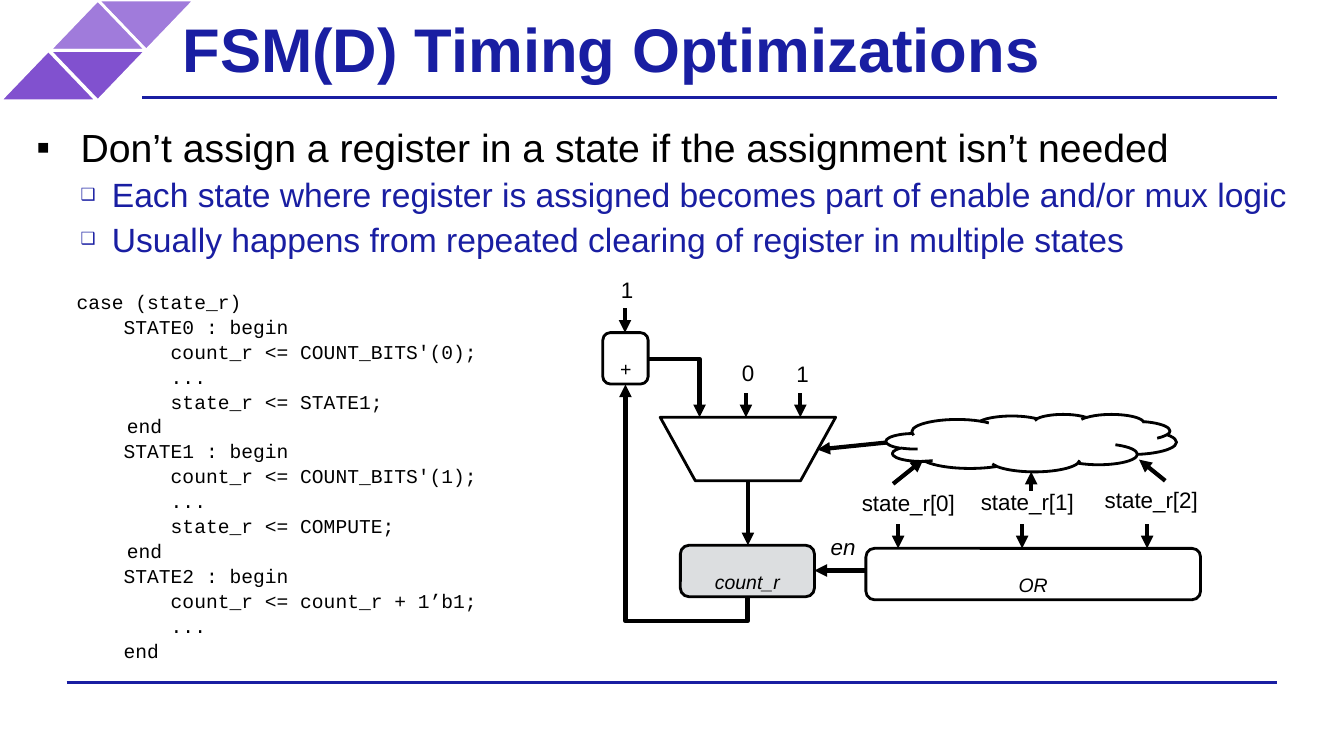
from pptx import Presentation
from pptx.dml.color import RGBColor
from pptx.enum.shapes import MSO_CONNECTOR, MSO_SHAPE
from pptx.enum.text import MSO_ANCHOR, PP_ALIGN
from pptx.oxml.ns import qn
from pptx.util import Inches, Pt
from lxml import etree

STRAIGHT, ELBOW = MSO_CONNECTOR.STRAIGHT, MSO_CONNECTOR.ELBOW
TRIANGLE, CLOUD = MSO_SHAPE.ISOSCELES_TRIANGLE, MSO_SHAPE.CLOUD
BOX, MUX = MSO_SHAPE.ROUNDED_RECTANGLE, MSO_SHAPE.FLOWCHART_MANUAL_OPERATION
TOP, MIDDLE = MSO_ANCHOR.TOP, MSO_ANCHOR.MIDDLE
LEFT, CENTER = PP_ALIGN.LEFT, PP_ALIGN.CENTER

COLORS = {"navy": "191EA2", "black": "000000", "white": "FFFFFF",
          "gray": "DCDEE0", "lilac": "A07BDB", "violet": "8151CF"}
FORMATS = {
    "title": {"name": "Arial", "size": Pt(44), "bold": True},
    "main": {"name": "Arial", "size": Pt(28)},
    "sub": {"name": "Arial", "size": Pt(24)},
    "code": {"name": "Courier New", "size": Pt(14)},
    "label": {"name": "Arial", "size": Pt(16)},
    "signal": {"name": "Arial", "size": Pt(16), "italic": True},
    "block": {"name": "Arial", "size": Pt(24), "italic": True},
}
COLUMNS, ROWS = 133.33, 75

CODE = """case (state_r)
    STATE0 : begin
        count_r <= COUNT_BITS'(0);
        ...
        state_r <= STATE1;
\tend
    STATE1 : begin
        count_r <= COUNT_BITS'(1);
        ...
        state_r <= COMPUTE;
\tend
    STATE2 : begin
        count_r <= count_r + 1’b1;
        ...
    end"""
BULLETS = [
    ("Don’t assign a register in a state if the assignment isn’t needed", 0),
    ("Each state where register is assigned becomes part of enable and/or mux logic", 1),
    ("Usually happens from repeated clearing of register in multiple states", 1),
]
LEVELS = [
    {"fmt": "main", "color": "black", "mark": "▪", "size": 100,
     "margin": 0.5, "hang": -0.44, "before": 6},
    {"fmt": "sub", "color": "navy", "mark": "❑", "size": 50,
     "margin": 0.81, "hang": -0.31, "before": 3},
]


class Slide:
    """Draws styled elements on one slide, placed by grid columns and rows."""

    def __init__(self, prs):
        self.s = prs.slides.add_slide(prs.slide_layouts[6])
        self.col = prs.slide_width / COLUMNS
        self.row = prs.slide_height / ROWS

    def place(self, x, y, w, h):
        return [round(v * u) for v, u in zip((x, y, w, h), (self.col, self.row) * 2)]

    def color(self, name):
        return RGBColor.from_string(COLORS[name])

    def run(self, p, text, fmt, color="black"):
        r = p.add_run()
        r.text = text
        for key, value in FORMATS[fmt].items():
            setattr(r.font, key, value)
        r.font.color.rgb = self.color(color)
        return r

    def frame(self, sp, inset, anchor, vertical=None):
        tf = sp.text_frame
        tf.word_wrap = True
        tf.vertical_anchor = anchor
        for side in ("left", "right", "top", "bottom"):
            across = side in ("left", "right") or vertical is None
            setattr(tf, f"margin_{side}", Inches(inset if across else vertical))
        return tf

    def text(self, at, text, fmt, color="black", inset=0.06, spacing=1.0):
        sp = self.s.shapes.add_textbox(*self.place(*at))
        tf = self.frame(sp, inset, MIDDLE)
        for i, line in enumerate(text.split("\n")):
            p = tf.add_paragraph() if i else tf.paragraphs[0]
            p.alignment = LEFT
            p.line_spacing = spacing
            if "\t" in line:
                tabs = etree.SubElement(p._p.get_or_add_pPr(), qn("a:tabLst"))
                etree.SubElement(tabs, qn("a:tab"), pos=str(Inches(0.5)), algn="l")
            self.run(p, line, fmt, color)

    def bullets(self, at, items):
        sp = self.s.shapes.add_textbox(*self.place(*at))
        tf = self.frame(sp, 0, TOP)
        for i, (text, level) in enumerate(items):
            p = tf.add_paragraph() if i else tf.paragraphs[0]
            style = LEVELS[level]
            p.level = level
            p.space_before = Pt(style["before"] if i else 0)
            pPr = p._p.get_or_add_pPr()
            pPr.set("marL", str(Inches(style["margin"])))
            pPr.set("indent", str(Inches(style["hang"])))
            etree.SubElement(pPr, qn("a:buSzPct"), val=str(style["size"] * 1000))
            etree.SubElement(pPr, qn("a:buFont"), typeface="Arial")
            etree.SubElement(pPr, qn("a:buChar"), char=style["mark"])
            self.run(p, text, style["fmt"], style["color"])

    def shape(self, kind, at, text="", fill=None, line="black", rotation=0):
        sp = self.s.shapes.add_shape(kind, *self.place(*at))
        sp.shadow.inherit = False
        sp.rotation = rotation
        if fill:
            sp.fill.solid()
            sp.fill.fore_color.rgb = self.color(fill)
        else:
            sp.fill.background()
        sp.line.color.rgb = self.color(line)
        sp.line.width = Pt(2)
        if text:
            p = self.frame(sp, 0.06, TOP, 0).paragraphs[0]
            p.alignment = CENTER
            r = self.run(p, text, "block")
            r._r.get_or_add_rPr().set("baseline", "-25000")

    def line(self, x1, y1, x2, y2, kind=STRAIGHT, color="black", width=3, arrow=True):
        cx = self.s.shapes.add_connector(kind, *self.place(x1, y1, x2, y2))
        cx.line.color.rgb = self.color(color)
        cx.line.width = Pt(width)
        spPr = cx._element.spPr
        if arrow:
            etree.SubElement(spPr.find(qn("a:ln")), qn("a:tailEnd"), type="triangle")
        etree.SubElement(spPr, qn("a:effectLst"))
        return spPr

    def elbow(self, x, y, w, h, preset, adjust=None, **transform):
        spPr = self.line(x, y, x + w, y + h, ELBOW)
        geom = spPr.find(qn("a:prstGeom"))
        geom.set("prst", preset)
        if adjust is not None:
            guides = geom.find(qn("a:avLst"))
            etree.SubElement(guides, qn("a:gd"), name="adj1", fmla=f"val {adjust}")
        for key, value in transform.items():
            spPr.find(qn("a:xfrm")).set(key, value)


def main():
    prs = Presentation()
    prs.slide_width, prs.slide_height = Inches(13.333), Inches(7.5)
    s = Slide(prs)

    for x, y, fill, turn in ((9.7, 0, "lilac", 180), (4.9, 0, "lilac", 0),
                             (4.9, 5, "violet", 180), (0, 5, "violet", 0)):
        s.shape(TRIANGLE, (x, y, 9.6, 5), fill=fill, line="white", rotation=turn)
    for left, y in ((14.1, 9.7), (6.6, 67.7)):
        s.line(left, y, 126.7, y, color="navy", width=2, arrow=False)

    s.text((16.7, 0, 103, 9.5), "FSM(D) Timing Optimizations", "title", "navy", 0.14)
    s.bullets((3, 12.2, 127.5, 55.5), BULLETS)
    s.text((7, 28.9, 50, 36.5), CODE, "code", spacing=1.06)

    s.shape(BOX, (67.5, 54.1, 13.3, 5.1), "count_r", fill="gray")
    s.shape(BOX, (85.9, 54.4, 33.2, 5.1), "OR")
    s.shape(BOX, (59.8, 33, 4.5, 5.1), "+")
    s.shape(MUX, (65.5, 41.4, 17.4, 6.3))
    s.shape(CLOUD, (87.9, 41.1, 28.8, 5.7))

    for x, y in ((61, 26.8), (78.4, 35.2)):
        s.text((x, y, 3.2, 3.8), "1", "label")
    s.text((73, 35.1, 3.2, 3.8), "0", "label")
    s.text((81.8, 52.3, 4.1, 3.8), "en", "signal")
    for i, (x, y) in enumerate(((84.9, 48), (96.7, 47.9), (109, 47.7))):
        s.text((x, y, 13.3, 3.8), f"state_r[{i}]", "label")

    for x, y in ((62, 30.6), (74, 39), (79.4, 39), (89.1, 52), (101.4, 52), (113.8, 52)):
        s.line(x, y, x, y + 2.4)
    for ends in ((86, 56.6, 80.8, 56.6), (74.2, 47.7, 74.2, 54.1), (88, 43.9, 81.1, 44.6),
                 (88.6, 48, 91.6, 45.6), (102.3, 48.7, 102.3, 46.8),
                 (115.6, 47.7, 113, 45.6)):
        s.line(*ends)
    s.elbow(64.3, 35.6, 5.1, 5.8, "bentConnector2")
    s.elbow(57.6, 42.6, 21, 12.1, "bentConnector3", -11900, rot="5400000", flipH="1")

    prs.save("out.pptx")


if __name__ == "__main__":
    main()
